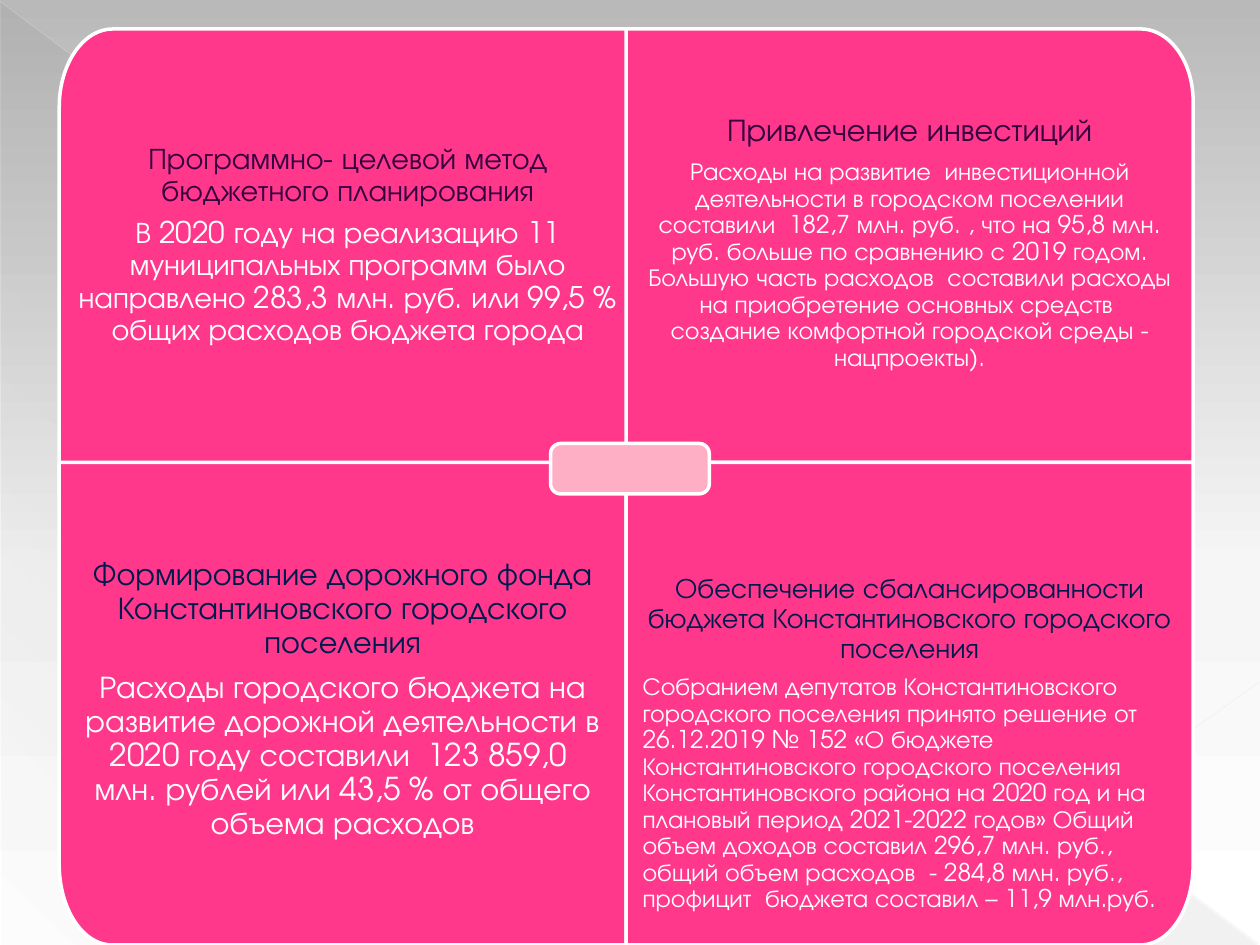
from dataclasses import dataclass
from math import cos, pi, sin

from lxml.etree import SubElement
from pptx import Presentation
from pptx.dml.color import RGBColor
from pptx.enum.shapes import MSO_CONNECTOR, MSO_SHAPE
from pptx.enum.text import MSO_ANCHOR as Anchor, PP_ALIGN as Align
from pptx.oxml.ns import qn
from pptx.util import Inches, Pt


@dataclass(frozen=True)
class Theme:
    font: str = "TeX Gyre Adventor"
    panel: str = "FF388C"
    badge: str = "FFAFC5"
    white: str = "FFFFFF"
    plum: str = "340040"
    navy: str = "001A4F"
    shade: str = "666666"
    border: float = 2
    spacing: float = 0.9
    gap: float = 0.35  # space after, as a share of the type size


@dataclass(frozen=True)
class Box:
    left: float
    top: float
    width: float
    height: float

    def emu(self):
        return [Inches(v) for v in (self.left, self.top, self.width, self.height)]


THEME = Theme()
WIDTH, HEIGHT = 10, 7.5
LEFT, TOP, MIDDLE_X, MIDDLE_Y = 0.47, 0.23, 4.97, 3.67
COLUMN = MIDDLE_X - LEFT
UPPER, LOWER = MIDDLE_Y - TOP, HEIGHT - MIDDLE_Y
CORNER_X, CORNER_Y = 0.093, 0.167  # corner radii as shares of the panel
PAD, CENTRE_PAD = 0.13, 0.76


def set_alpha(color_element, percent):
    SubElement(color_element, qn("a:alpha")).set("val", str(percent * 1000))


def set_gradient(fill, stops, angle):
    """Each stop is position, colour, opacity; the angle runs clockwise."""
    fill.gradient()
    fill.gradient_angle = 360 - angle
    stop_list = fill.gradient_stops[0]._gs.getparent()
    for stop in list(stop_list):
        stop_list.remove(stop)
    for position, color, opacity in stops:
        stop = SubElement(stop_list, qn("a:gs"), pos=str(position * 1000))
        color_element = SubElement(stop, qn("a:srgbClr"), val=color)
        if opacity < 100:
            set_alpha(color_element, opacity)


def style_shape(shape, color):
    shape.shadow.inherit = False
    shape.fill.solid()
    shape.fill.fore_color.rgb = RGBColor.from_string(color)
    shape.line.color.rgb = RGBColor.from_string(THEME.white)
    shape.line.width = Pt(THEME.border)


def add_text(paragraph, text, size, color, align=Align.CENTER):
    paragraph.alignment = align
    paragraph.line_spacing = THEME.spacing
    paragraph.space_after = Pt(round(size * THEME.gap, 1))
    run = paragraph.add_run()
    run.text = text
    run.font.name = THEME.font
    run.font.size = Pt(size)
    run.font.color.rgb = RGBColor.from_string(color)


def add_ray(slide, start, end, color, width, opacity):
    line = slide.shapes.add_connector(
        MSO_CONNECTOR.STRAIGHT, *[Inches(v) for v in (*start, *end)])
    line.line.color.rgb = RGBColor.from_string(color)
    line.line.width = Pt(width)
    set_alpha(line.line.fill._xPr.find(".//" + qn("a:srgbClr")), opacity)
    SubElement(line._element.spPr, qn("a:effectLst"))


def add_backdrop(slide):
    set_gradient(slide.background.fill,
                 [(0, "B9B9B9", 100), (60, "F6F6F6", 100), (100, "FFFFFF", 100)], 90)
    triangle = slide.shapes.add_shape(
        MSO_SHAPE.RIGHT_TRIANGLE, *Box(0.01, 0.02, 9.98, 7.48).emu())
    triangle.shadow.inherit = False
    triangle.line.fill.background()
    set_gradient(triangle.fill, [(0, THEME.shade, 10), (70, THEME.shade, 8),
                                 (100, THEME.shade, 1)], 133)
    add_ray(slide, (0, 0.01), (9.99, 7.49), "E8E8E8", 0.39, 35)
    add_ray(slide, (10, 5.41), (7.07, 7.49), "EAEAEA", 0.47, 45)


def panel_outline(box, side_x, side_y, steps=24):
    """Rectangle with one elliptical corner; sides are -1 or 1."""
    centre_x, centre_y = box.left + box.width / 2, box.top + box.height / 2
    half_x, half_y = side_x * box.width / 2, side_y * box.height / 2
    unit = [(-1, 1), (-1, -1), (1, -1)]
    for step in range(steps + 1):
        angle = step * pi / 2 / steps
        unit.append((1 - 2 * CORNER_X * (1 - cos(angle)),
                     1 - 2 * CORNER_Y * (1 - sin(angle))))
    return [(Inches(centre_x + x * half_x), Inches(centre_y + y * half_y))
            for x, y in unit]


def add_panel(slide, box, sides, heading, body, insets,
              anchor=Anchor.MIDDLE, body_align=Align.CENTER):
    start, *rest = panel_outline(box, *sides)
    builder = slide.shapes.build_freeform(*start)
    builder.add_line_segments(rest, close=True)
    panel = builder.convert_to_shape()
    style_shape(panel, THEME.panel)

    frame = panel.text_frame
    frame.word_wrap = True
    frame.vertical_anchor = anchor
    frame.margin_left = frame.margin_right = Inches(PAD)
    frame.margin_top, frame.margin_bottom = [Inches(v) for v in insets]
    add_text(frame.paragraphs[0], *heading)
    add_text(frame.add_paragraph(), *body, THEME.white, align=body_align)


def add_badge(slide, box):
    badge = slide.shapes.add_shape(MSO_SHAPE.ROUNDED_RECTANGLE, *box.emu())
    badge.adjustments[0] = 0.2
    style_shape(badge, THEME.badge)


def add_matrix(slide):
    # The first panel reaches a little under its neighbours
    add_panel(
        slide, Box(LEFT, TOP, COLUMN + 0.08, UPPER + 0.27), (-1, -1),
        ("Программно- целевой метод бюджетного планирования", 17, THEME.plum),
        ("В 2020 году на реализацию 11 муниципальных программ было направлено "
         "283,3 млн. руб. или 99,5 % общих расходов бюджета города", 17),
        (0.48, CENTRE_PAD))
    add_panel(
        slide, Box(MIDDLE_X, TOP, COLUMN, UPPER), (1, -1),
        ("Привлечение инвестиций", 18, THEME.plum),
        ("Расходы на развитие  инвестиционной деятельности в городском поселении "
         "составили  182,7 млн. руб. , что на 95,8 млн. руб. больше по сравнению "
         "с 2019 годом. Большую часть расходов  составили расходы на приобретение "
         "основных средств  создание комфортной городской среды - нацпроекты).", 14),
        (0.72, CENTRE_PAD))
    add_panel(
        slide, Box(LEFT, MIDDLE_Y, COLUMN, LOWER), (-1, 1),
        ("Формирование дорожного фонда Константиновского городского поселения",
         18, THEME.navy),
        ("Расходы городского бюджета на развитие дорожной деятельности в 2020 году "
         "составили  123 859,0  млн. рублей или 43,5 % от общего объема расходов", 18),
        (CENTRE_PAD, PAD), anchor=Anchor.TOP)
    add_panel(
        slide, Box(MIDDLE_X, MIDDLE_Y, COLUMN, LOWER), (1, 1),
        ("Обеспечение сбалансированности бюджета Константиновского городского "
         "поселения", 16, THEME.navy),
        ("Собранием депутатов Константиновского городского поселения принято решение "
         "от  26.12.2019 № 152 «О бюджете Константиновского городского поселения "
         "Константиновского района на 2020 год и на плановый период 2021-2022 годов» "
         "Общий объем доходов составил 296,7 млн. руб., общий объем расходов  - "
         "284,8 млн. руб., профицит  бюджета составил – 11,9 млн.руб.", 14),
        (CENTRE_PAD, PAD), body_align=Align.LEFT)
    add_badge(slide, Box(4.37, 3.52, 1.26, 0.4))


def main():
    presentation = Presentation()
    presentation.slide_width, presentation.slide_height = Inches(WIDTH), Inches(HEIGHT)
    slide = presentation.slides.add_slide(presentation.slide_layouts[6])
    add_backdrop(slide)
    add_matrix(slide)
    presentation.save("out.pptx")


if __name__ == "__main__":
    main()
